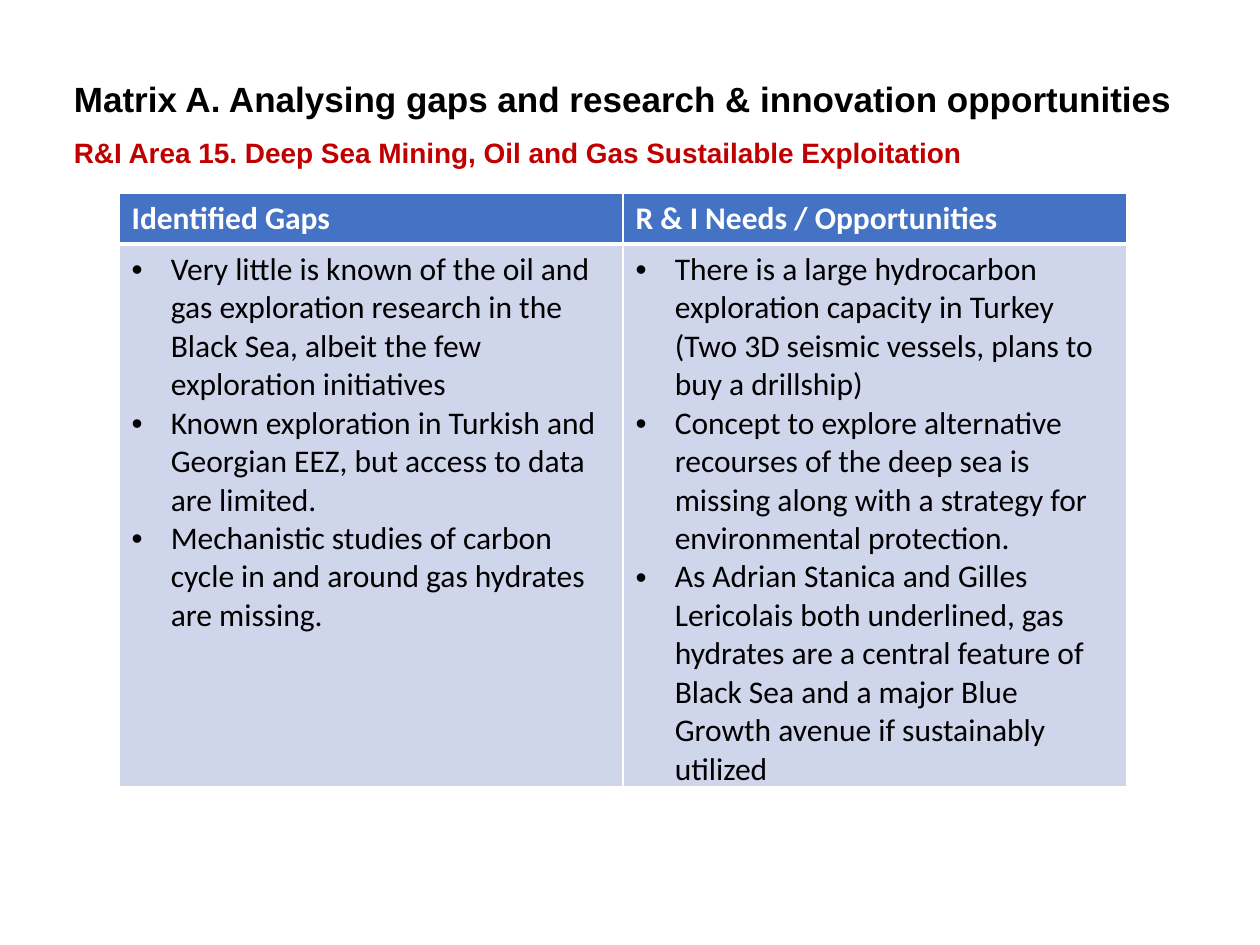
import pptx
import pptx.dml.color
import pptx.enum.text
import pptx.oxml.ns
import pptx.util
from lxml import etree

Cm = pptx.util.Cm
Pt = pptx.util.Pt
qn = pptx.oxml.ns.qn

HUES = {"ink": "000000", "red": "C00000", "head": "4472C4", "body": "CFD5EA", "white": "FFFFFF"}

GAPS = [
    "Very little is known of the oil and gas exploration research in the Black Sea, albeit the few exploration initiatives",
    "Known exploration in Turkish and Georgian EEZ, but access to data are limited.",
    "Mechanistic studies of carbon cycle in and around gas hydrates are missing.",
]
NEEDS = [
    "There is a large hydrocarbon exploration capacity in Turkey (Two 3D seismic vessels, plans to buy a drillship)",
    "Concept to explore alternative recourses of the deep sea is missing along with a strategy for environmental protection.",
    "As Adrian Stanica and Gilles Lericolais both underlined, gas hydrates are a central feature of Black Sea and a major Blue Growth avenue if sustainably utilized",
]


def color(name):
    return pptx.dml.color.RGBColor.from_string(HUES[name])


def write(para, text, size=18, font="Calibri", hue="ink", bold=False, bullet=None):
    run = para.add_run()
    run.text = text
    run.font.size = Pt(size)
    run.font.name = font
    run.font.bold = bold
    run.font.color.rgb = color(hue)
    if bullet:
        props = para._p.get_or_add_pPr()
        props.set("marL", str(Cm(0.79)))
        props.set("indent", str(-Cm(0.79)))
        etree.SubElement(props, qn("a:buFont"), typeface="Arial")
        etree.SubElement(props, qn("a:buChar"), char=bullet)


class Page:
    """Hold the style and the current slide."""

    def __init__(self, deck):
        self.slide = deck.slides.add_slide(deck.slide_layouts[6])
        self.font = "Arial"

    def label(self, text, left, top, width, height, anchor="TOP", **style):
        box = self.slide.shapes.add_textbox(Cm(left), Cm(top), Cm(width), Cm(height))
        frame = box.text_frame
        frame.word_wrap = True
        frame.vertical_anchor = pptx.enum.text.MSO_ANCHOR[anchor]
        write(frame.paragraphs[0], text, font=self.font, bold=True, **style)

    def edge(self, cell, **sides):
        props = cell._tc.get_or_add_tcPr()
        for side, width in sides.items():
            line = etree.SubElement(props, qn("a:ln" + side), w=str(Pt(width)))
            fill = etree.SubElement(line, qn("a:solidFill"))
            etree.SubElement(fill, qn("a:srgbClr"), val=HUES["white"])

    def cell(self, cell, lines, back, top, base, **style):
        self.edge(cell, L=1, R=1, T=top, B=base)
        cell.fill.solid()
        cell.fill.fore_color.rgb = color(back)
        frame = cell.text_frame
        for i, text in enumerate(lines):
            para = frame.add_paragraph() if i else frame.paragraphs[0]
            write(para, text, **style)

    def table(self, columns, left, top, width, heights):
        shape = self.slide.shapes.add_table(
            len(heights), len(columns), Cm(left), Cm(top), Cm(width), Cm(sum(heights)))
        grid = shape.table
        for row, height in zip(grid.rows, heights):
            row.height = Cm(height)
        for i, (head, lines) in enumerate(columns.items()):
            self.cell(grid.cell(0, i), [head], "head", 1, 3, hue="white", bold=True)
            self.cell(grid.cell(1, i), lines, "body", 3, 1, bullet="•")


def main():
    deck = pptx.Presentation()
    deck.slide_width, deck.slide_height = Cm(25.4), Cm(19.05)
    page = Page(deck)
    page.label("Matrix A. Analysing gaps and research & innovation opportunities",
               1.24, 1.24, 22.81, 1.5, anchor="MIDDLE", size=20)
    page.label("R&I Area 15. Deep Sea Mining, Oil and Gas Sustailable Exploitation",
               1.24, 2.6, 19.63, 0.94, size=16, hue="red")
    page.table({"Identified Gaps": GAPS, "R & I Needs / Opportunities": NEEDS},
               2.4, 3.89, 20.32, [1.03, 10.93])
    deck.save("out.pptx")


if __name__ == "__main__":
    main()
